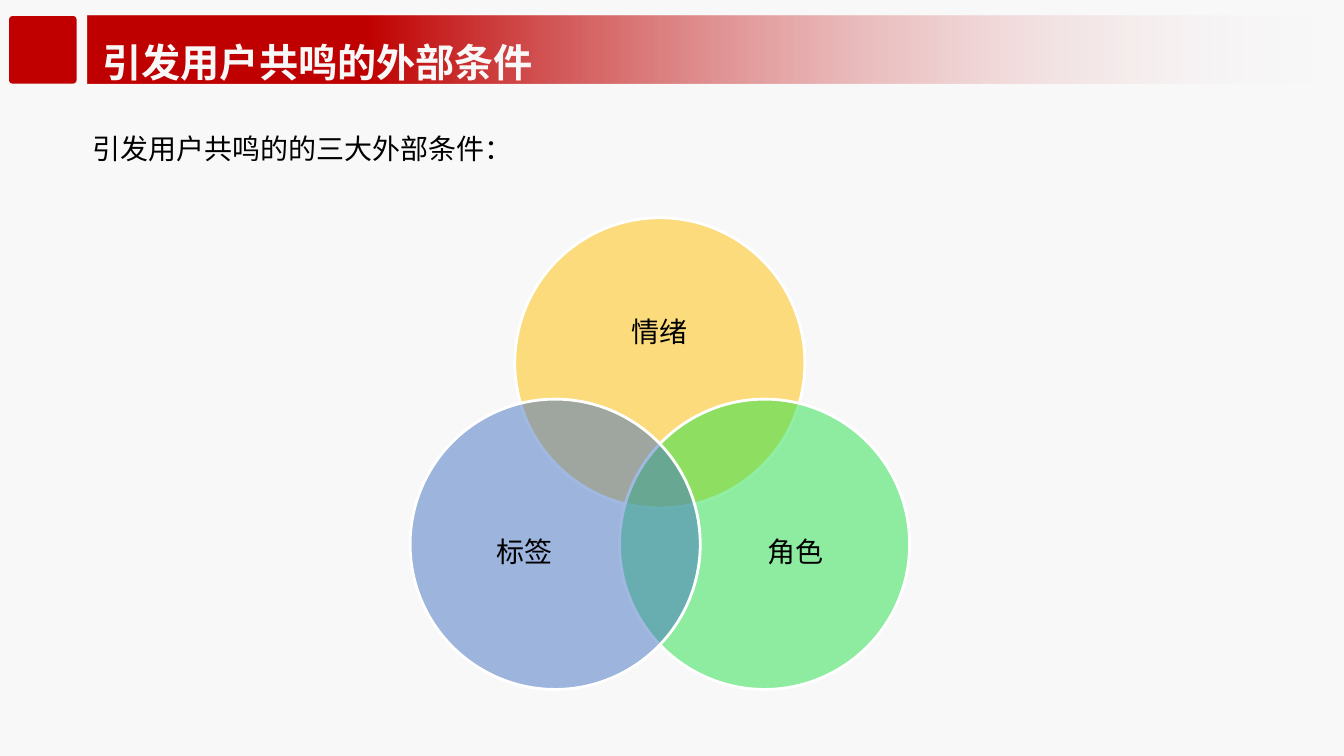
"""Build a slide with a title bar and a three-circle Venn diagram."""
import math

import pptx
import pptx.dml.color
import pptx.enum.shapes
import pptx.enum.text
import pptx.oxml.ns
import pptx.util
from lxml import etree

CELL = 0.12
FONT = "Noto Sans CJK SC"
COLORS = {
    "background": "F8F8F8",
    "red": "C00000",
    "fade": "F7FAFD",
    "black": "000000",
    "white": "FFFFFF",
    "yellow": "FFC000",
    "green": "23E148",
    "blue": "4472C4",
}
SHAPES = pptx.enum.shapes.MSO_SHAPE
ALIGN = pptx.enum.text.PP_ALIGN
ANCHOR = pptx.enum.text.MSO_ANCHOR

BAR_TOP, BAR_HEIGHT = 1.33, 5.58
VENN_CENTER = (54.58, 40)
VENN_OFFSET, RADIUS = 10, 12
CONDITIONS = [
    ("情绪", "yellow", -90, (0, -2.42)),
    ("角色", "green", 30, (2.54, 0.75)),
    ("标签", "blue", 150, (-2.54, 0.75)),
]


def cells(*counts):
    """Turn numbers of grid cells into lengths."""
    return [pptx.util.Inches(count * CELL) for count in counts]


def color(name):
    """Look up a colour by name."""
    return pptx.dml.color.RGBColor.from_string(COLORS[name])


def set_alpha(fill_owner, percent):
    """Set the opacity of the first colour in a shape's fill."""
    rgb = fill_owner._element.spPr.find(".//" + pptx.oxml.ns.qn("a:srgbClr"))
    alpha = etree.SubElement(rgb, pptx.oxml.ns.qn("a:alpha"))
    alpha.set("val", str(percent * 1000))


def add_block(slide, kind, box, fill):
    """Add a solid shape without outline or shadow."""
    shape = slide.shapes.add_shape(kind, *cells(*box))
    shape.shadow.inherit = False
    shape.fill.solid()
    shape.fill.fore_color.rgb = color(fill)
    shape.line.fill.background()
    return shape


def add_text(slide, box, text, size, ink="black", bold=False, spacing=1.5,
             align=ALIGN.LEFT, anchor=ANCHOR.TOP, margins=(0.1, 0.05)):
    """Add a text box holding one run."""
    frame = slide.shapes.add_textbox(*cells(*box)).text_frame
    frame.word_wrap = True
    frame.vertical_anchor = anchor
    side, edge = map(pptx.util.Inches, margins)
    frame.margin_left = frame.margin_right = side
    frame.margin_top = frame.margin_bottom = edge
    paragraph = frame.paragraphs[0]
    paragraph.alignment = align
    paragraph.line_spacing = spacing
    run = paragraph.add_run()
    run.text = text
    run.font.size = pptx.util.Pt(size)
    run.font.bold = bold
    run.font.name = FONT
    run.font.color.rgb = color(ink)
    east_asian = etree.SubElement(run.font._element, pptx.oxml.ns.qn("a:ea"))
    east_asian.set("typeface", FONT)


def add_header(slide, title):
    """Add the fading bar, the square tile and the title."""
    bar = add_block(slide, SHAPES.RECTANGLE,
                    (7.25, BAR_TOP, 103.92, BAR_HEIGHT), "red")
    bar.fill.gradient()
    bar.fill.gradient_angle = 180
    for stop, name, position in zip(bar.fill.gradient_stops,
                                    ("fade", "red"), (0, 0.78)):
        stop.color.rgb = color(name)
        stop.position = position
    set_alpha(bar, 0)
    tile = add_block(slide, SHAPES.ROUNDED_RECTANGLE,
                     (0.75, BAR_TOP, BAR_HEIGHT, BAR_HEIGHT), "red")
    tile.adjustments[0] = 0.05
    add_text(slide, (7.67, BAR_TOP, 82.08, BAR_HEIGHT), title, 28,
             ink="background", bold=True, anchor=ANCHOR.MIDDLE)


def add_condition(slide, label, fill, angle, shift):
    """Add one translucent circle of the Venn diagram and its label."""
    x = VENN_CENTER[0] + VENN_OFFSET * math.cos(math.radians(angle))
    y = VENN_CENTER[1] + VENN_OFFSET * math.sin(math.radians(angle))
    circle = add_block(slide, SHAPES.OVAL,
                       (x - RADIUS, y - RADIUS, 2 * RADIUS, 2 * RADIUS), fill)
    set_alpha(circle, 50)
    circle.line.color.rgb = color("white")
    circle.line.width = pptx.util.Pt(2)
    width, height = 14.4, 12
    box = (x + shift[0] - width / 2, y + shift[1] - height / 2, width, height)
    add_text(slide, box, label, 20, spacing=0.9, align=ALIGN.CENTER,
             anchor=ANCHOR.MIDDLE, margins=(0, 0))


def main():
    """Build and save the slide."""
    presentation = pptx.Presentation()
    presentation.slide_width = pptx.util.Inches(13.34)
    presentation.slide_height = pptx.util.Inches(7.5)
    slide = presentation.slides.add_slide(presentation.slide_layouts[6])
    slide.background.fill.solid()
    slide.background.fill.fore_color.rgb = color("background")
    add_header(slide, "引发用户共鸣的外部条件")
    add_text(slide, (6.83, 9.08, 100.58, 4.58),
             "引发用户共鸣的的三大外部条件：", 20)
    for condition in CONDITIONS:
        add_condition(slide, *condition)
    presentation.save("out.pptx")


if __name__ == "__main__":
    main()
